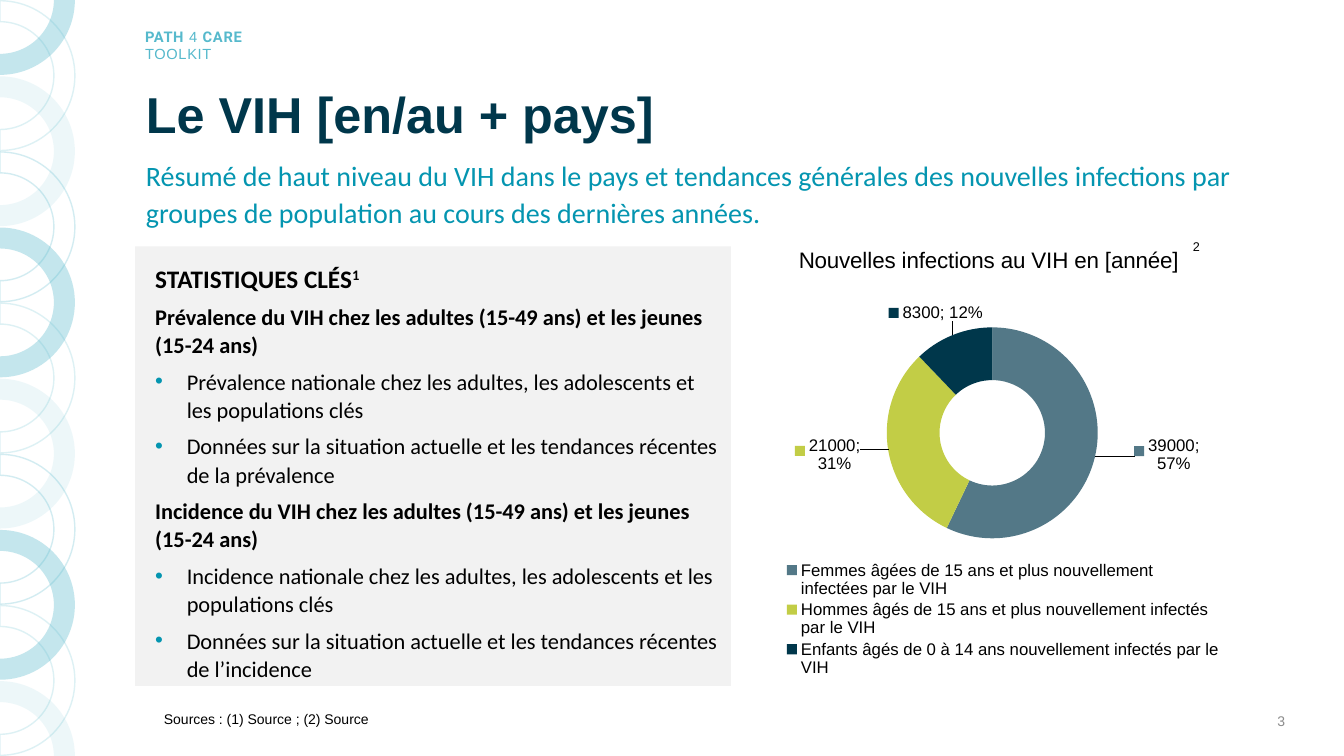
"""Build the slide on HIV statistics with key points and a doughnut of new infections."""
import math

import lxml.etree
import pptx
import pptx.chart.data
import pptx.dml.color
import pptx.enum.chart
import pptx.enum.text
import pptx.oxml.ns
import pptx.util

Pt = pptx.util.Pt
ALIGN = pptx.enum.text.PP_ALIGN
ANCHOR = pptx.enum.text.MSO_ANCHOR

COLORS = {
    "ring": "56B9CC", "heading": "00374B", "accent": "0495B0", "text": "000000",
    "panel": "F2F2F2", "number": "8C8C8C",
    "women": "537887", "men": "C2CD46", "children": "00374B",
}
HEADER = [
    [("PATH", {"font": "Roboto", "bold": True}), (" 4 ", {}), ("CARE", {"font": "Roboto", "bold": True})],
    [("TOOLKIT", {})],
]
TITLE = "Le VIH [en/au + pays]"
SUMMARY = ("Résumé de haut niveau du VIH dans le pays et tendances générales des nouvelles "
           "infections par groupes de population au cours des dernières années.")
STATISTICS = [("STATISTIQUES CLÉS", {}), ("1", {"baseline": 30000})]
TOPICS = [
    ("Prévalence du VIH chez les adultes (15-49 ans) et les jeunes (15-24 ans)", [
        "Prévalence nationale chez les adultes, les adolescents et les populations clés",
        "Données sur la situation actuelle et les tendances récentes de la prévalence",
    ]),
    ("Incidence du VIH chez les adultes (15-49 ans) et les jeunes (15-24 ans)", [
        "Incidence nationale chez les adultes, les adolescents et les populations clés",
        "Données sur la situation actuelle et les tendances récentes de l’incidence",
    ]),
]
INFECTIONS_TITLE = "Nouvelles infections au VIH en [année]"
INFECTIONS = [
    ("Femmes âgées de 15 ans et plus nouvellement infectées par le VIH", 39000, "women", (0.18, 0.01)),
    ("Hommes âgés de 15 ans et plus nouvellement infectés par le VIH", 21000, "men", (-0.16, 0.02)),
    ("Enfants âgés de 0 à 14 ans nouvellement infectés par le VIH", 8300, "children", (-0.05, -0.1)),
]
TITLE_PLACE = {"x": 0.13, "y": 0.06}
PLOT_PLACE = {"x": 0.3, "y": 0.24, "w": 0.39, "h": 0.45}
LEGEND_PLACE = {"x": 0.11, "y": 0.73, "w": 0.81, "h": 0.26}
INFECTIONS_NOTE = "2"
SOURCES = "Sources\u00a0: (1) Source\u00a0; (2) Source"
SLIDE_NUMBER = "3"
RING_STYLES = [("fill", 35), ("line", 20), ("fill", 10), ("line", 25)]
RING_COUNT, RING_STEP, RING_OUTER, RING_INNER = 11, 54, 53.5, 38.5


def rgb(name):
    return pptx.dml.color.RGBColor.from_string(COLORS[name])


def add_xml(parent, tag, **attributes):
    child = lxml.etree.SubElement(parent, pptx.oxml.ns.qn(tag))
    for key, value in attributes.items():
        child.set(key, str(value))
    return child


def write(frame, text, *, size, color="text", font="Arial", bold=False, align=ALIGN.LEFT,
          line=None, before=0, bullet=None, **marks):
    paragraph = frame.paragraphs[0]
    if paragraph.runs:
        paragraph = frame.add_paragraph()
    paragraph.alignment = align
    paragraph.line_spacing = line
    paragraph.space_before = Pt(before)
    properties = paragraph._p.get_or_add_pPr()
    indent = Pt(22.5) if bullet else 0
    properties.set("marL", str(indent))
    properties.set("indent", str(-indent))
    if bullet:
        add_xml(add_xml(properties, "a:buClr"), "a:srgbClr", val=COLORS["accent"])
        add_xml(properties, "a:buFont", typeface="Arial")
        add_xml(properties, "a:buChar", char=bullet)
    else:
        add_xml(properties, "a:buNone")
    for words, changes in [(text, {})] if isinstance(text, str) else text:
        style = {"font": font, "bold": bold, **marks, **changes}
        run = paragraph.add_run()
        run.text = words
        run.font.size = Pt(size)
        run.font.name = style.pop("font")
        run.font.bold = style.pop("bold")
        run.font.color.rgb = rgb(color)
        for key, value in style.items():
            run._r.get_or_add_rPr().set(key, str(value))


def prepare(box, left, top, width, height, insets=(7.2, 3.6, 7.2, 3.6), anchor=ANCHOR.TOP, wrap=True):
    box.left, box.top, box.width, box.height = Pt(left), Pt(top), Pt(width), Pt(height)
    frame = box.text_frame
    frame.auto_size = pptx.enum.text.MSO_AUTO_SIZE.NONE
    frame.word_wrap = wrap
    frame.vertical_anchor = anchor
    frame.margin_left, frame.margin_top, frame.margin_right, frame.margin_bottom = map(Pt, insets)
    return frame


def add_ring(shapes, index):
    kind, opacity = RING_STYLES[index % len(RING_STYLES)]
    start = 0 if index == 0 else -90
    end = 0 if index == RING_COUNT - 1 else 90
    angles = list(range(start, end + 1, 90))
    edge = [(RING_OUTER, angle) for angle in angles] + [(RING_INNER, angle) for angle in reversed(angles)]
    points = [(Pt(radius * math.cos(math.radians(angle))),
               Pt(index * RING_STEP + radius * math.sin(math.radians(angle)))) for radius, angle in edge]
    outline = shapes.build_freeform(*points[0])
    outline.add_line_segments(points[1:])
    ring = outline.convert_to_shape()
    for side, (radius, angle), (next_radius, next_angle) in zip(ring._element.xpath(".//a:lnTo"), edge, edge[1:]):
        if radius == next_radius:
            arc = add_xml(side.getparent(), "a:arcTo", wR=Pt(radius), hR=Pt(radius),
                          stAng=angle % 360 * 60000, swAng=(next_angle - angle) * 60000)
            side.getparent().replace(side, arc)
    ring.shadow.inherit = False
    if kind == "fill":
        ring.line.fill.background()
        paint = ring.fill
    else:
        ring.fill.background()
        ring.line.width = Pt(1)
        paint = ring.line.fill
    paint.solid()
    paint.fore_color.rgb = rgb("ring")
    for shade in ring._element.xpath("./p:spPr//a:srgbClr"):
        add_xml(shade, "a:alpha", val=opacity * 1000)


def place(parent, position, **measures):
    for existing in parent.findall(pptx.oxml.ns.qn("c:layout")):
        parent.remove(existing)
    layout = add_xml(parent, "c:layout")
    manual = add_xml(layout, "c:manualLayout")
    if parent.tag == pptx.oxml.ns.qn("c:plotArea"):
        add_xml(manual, "c:layoutTarget", val="inner")
    if parent.tag != pptx.oxml.ns.qn("c:dLbl"):
        for axis in "xy":
            add_xml(manual, f"c:{axis}Mode", val="edge")
    for key, value in measures.items():
        add_xml(manual, f"c:{key}", val=value)
    parent.insert(position, layout)


def add_infections(shapes):
    data = pptx.chart.data.CategoryChartData()
    names, values, shades, offsets = zip(*INFECTIONS)
    data.categories = names
    data.add_series("Series 1", values)
    chart = shapes.add_chart(pptx.enum.chart.XL_CHART_TYPE.DOUGHNUT,
                             Pt(517.5), Pt(152.5), Pt(386.5), Pt(337), data).chart
    chart.font.size, chart.font.name = Pt(12), "Arial"
    chart.font.color.rgb = rgb("text")
    chart.has_title = True
    write(chart.chart_title.text_frame, INFECTIONS_TITLE, size=16)
    chart.has_legend = True
    chart.legend.position = pptx.enum.chart.XL_LEGEND_POSITION.RIGHT
    chart.legend.include_in_layout = False
    chart.legend.font.size, chart.legend.font.name = Pt(12), "Arial"
    chart.plots[0].vary_by_categories = True
    series = chart.plots[0].series[0]
    for index, shade in enumerate(shades):
        point = series.points[index]
        point.format.fill.solid()
        point.format.fill.fore_color.rgb = rgb(shade)
        point.format.line.fill.background()
        point.data_label.font.size = Pt(12)
    for label, (x, y) in zip(chart.element.xpath("//c:dLbl"), offsets):
        place(label, 1, x=x, y=y)
        for flag in ("c:showLegendKey", "c:showVal", "c:showPercent"):
            label.find(pptx.oxml.ns.qn(flag)).set("val", "1")
        add_xml(label, "c:separator").text = "; "
    place(chart.element.xpath("//c:title")[0], 1, **TITLE_PLACE)
    place(chart.element.xpath("//c:plotArea")[0], 0, **PLOT_PLACE)
    place(chart.element.xpath("//c:legend")[0], 1, **LEGEND_PLACE)


def main():
    deck = pptx.Presentation()
    deck.slide_width, deck.slide_height = Pt(960), Pt(540)
    slide = deck.slides.add_slide(deck.slide_layouts[3])
    shapes = slide.shapes
    title, summary, statistics = slide.placeholders

    def text_box(*bounds, **options):
        return prepare(shapes.add_textbox(0, 0, 0, 0), *bounds, **options)

    for index in range(RING_COUNT):
        add_ring(shapes, index)
    header = text_box(96.5, 16, 132, 32, wrap=False)
    for words in HEADER:
        write(header, words, size=10.5, color="ring", spc=50)

    write(prepare(title, 97, 64, 797, 40, anchor=ANCHOR.MIDDLE), TITLE,
          size=36, color="heading", bold=True, line=0.9)
    write(prepare(summary, 97, 107, 797, 37.5), SUMMARY,
          size=20, color="accent", font="Calibri", line=1.1, before=12)
    statistics.fill.solid()
    statistics.fill.fore_color.rgb = rgb("panel")
    panel = prepare(statistics, 96.5, 176, 425.5, 314, insets=(14.4, 10.8, 7.2, 3.6))
    spacing = {"font": "Calibri", "line": 1.05, "before": 6}
    write(panel, STATISTICS, size=18, bold=True, **spacing)
    for topic, points in TOPICS:
        write(panel, topic, size=16, bold=True, **spacing)
        for point in points:
            write(panel, point, size=16, bullet="•", **spacing)

    add_infections(shapes)
    write(text_box(845, 167, 36, 18), INFECTIONS_NOTE, size=9)
    write(text_box(110, 500.5, 580, 29, insets=(7.2,) * 4), SOURCES, size=10)
    write(text_box(709, 500.5, 216, 29, anchor=ANCHOR.MIDDLE), SLIDE_NUMBER,
          size=10, color="number", align=ALIGN.RIGHT)
    deck.save("out.pptx")


if __name__ == "__main__":
    main()
